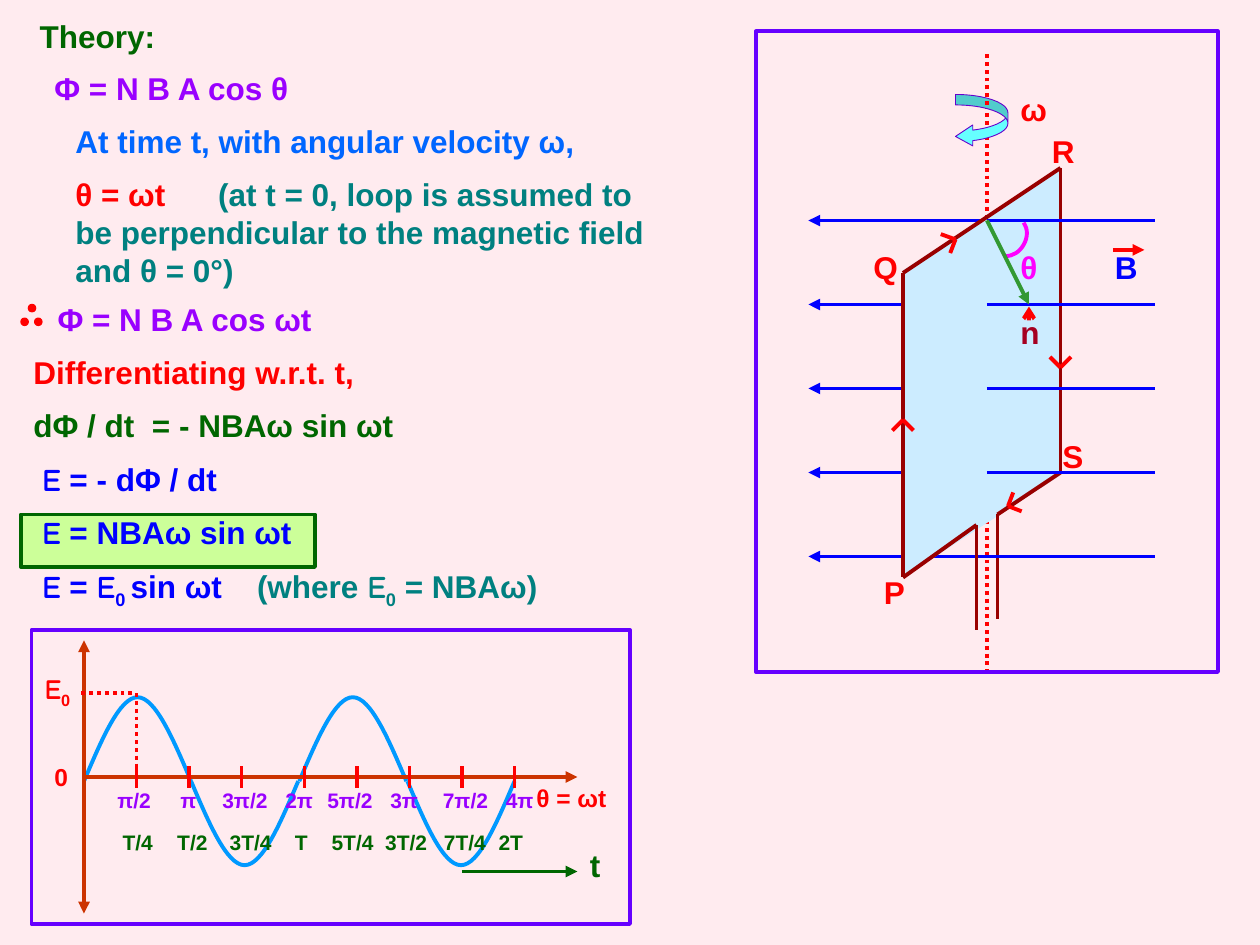
from dataclasses import dataclass

from lxml.etree import SubElement
from pptx import Presentation
from pptx.dml.color import RGBColor
from pptx.enum.dml import MSO_LINE_DASH_STYLE as DASH
from pptx.enum.shapes import MSO_CONNECTOR, MSO_SHAPE as SHAPE
from pptx.enum.text import MSO_AUTO_SIZE
from pptx.oxml.ns import qn
from pptx.util import Pt

PX = 7620
C = {
    "bg": "FFEBEF", "red": "FF0000", "blue": "0000FF", "green": "006600",
    "violet": "9900FF", "sky": "0066FF", "teal": "008080", "maroon": "990000",
    "frame": "6600FF", "loop": "CCECFF", "pink": "FF00FF", "normal": "339933",
    "nhat": "A50021", "cyan": "66FFFF", "purple": "6600CC", "lime": "CCFF99",
    "wave": "0099FF", "axis": "CC3300",
}


@dataclass
class Run:
    text: str
    color: str
    size: int = 18
    font: str = "Arial"
    base: int = 0


@dataclass
class Para:
    runs: list[Run]
    tabs: tuple[int, ...] = ()


@dataclass
class Line:
    x1: int
    y1: int
    x2: int
    y2: int
    color: str
    tail: str = ""
    head: str = ""
    dotted: bool = False


prs = Presentation()
prs.slide_width, prs.slide_height = 1200 * PX, 900 * PX
s = prs.slides.add_slide(prs.slide_layouts[6])
s.background.fill.solid()
s.background.fill.fore_color.rgb = RGBColor.from_string(C["bg"])


def paint(sp, fill: str = "", line: str = "", width: float = 2.25) -> None:
    sp.shadow.inherit = False
    for part, color in ((sp.fill, fill), (sp.line.fill, line)):
        if color:
            part.solid()
            part.fore_color.rgb = RGBColor.from_string(C[color])
        else:
            part.background()
    if line:
        sp.line.width = Pt(width)


def shape(kind, x: int, y: int, w: int, h: int, fill="", line="", width=2.25):
    sp = s.shapes.add_shape(kind, x * PX, y * PX, w * PX, h * PX)
    paint(sp, fill, line, width)
    return sp


def curve(points: list[tuple[int, int]], color: str) -> None:
    builder = s.shapes.build_freeform(*points[0], scale=PX)
    builder.add_line_segments(points[1:], close=False)
    sp = builder.convert_to_shape()
    outline = sp._element.find(".//" + qn("a:path"))
    segments = outline.findall(qn("a:lnTo"))
    for i in range(0, len(segments), 3):
        bezier = SubElement(outline, qn("a:cubicBezTo"))
        for segment in segments[i:i + 3]:
            bezier.append(segment[0])
            outline.remove(segment)
    paint(sp, line=color)


def draw(ln: Line) -> None:
    cx = s.shapes.add_connector(MSO_CONNECTOR.STRAIGHT, ln.x1 * PX, ln.y1 * PX,
                                ln.x2 * PX, ln.y2 * PX)
    cx.line.color.rgb = RGBColor.from_string(C[ln.color])
    cx.line.width = Pt(2.25)
    if ln.dotted:
        cx.line.dash_style = DASH.ROUND_DOT
    props = cx.line.fill._xPr
    for tag, kind in (("a:headEnd", ln.head), ("a:tailEnd", ln.tail)):
        if kind:
            SubElement(props, qn(tag), type=kind)
    SubElement(cx._element.spPr, qn("a:effectLst"))


def text(x: int, y: int, w: int, h: int, paras: list[Para], wrap: bool = True) -> None:
    tf = s.shapes.add_textbox(x * PX, y * PX, w * PX, h * PX).text_frame
    tf.word_wrap = wrap
    tf.auto_size = MSO_AUTO_SIZE.SHAPE_TO_FIT_TEXT
    for i, para in enumerate(paras):
        p = tf.add_paragraph() if i else tf.paragraphs[0]
        if i:
            p.space_before = Pt(9)
        if para.tabs:
            stops = SubElement(p._p.get_or_add_pPr(), qn("a:tabLst"))
            for pos in para.tabs:
                SubElement(stops, qn("a:tab"), pos=str(pos * PX), algn="l")
        for run in para.runs:
            r = p.add_run()
            r.text = run.text
            r.font.size, r.font.name, r.font.bold = Pt(run.size), run.font, True
            r.font.color.rgb = RGBColor.from_string(C[run.color])
            if run.base:
                r.font._element.set("baseline", str(run.base * 1000))


def label(x: int, y: int, w: int, words: str, color: str, size: int = 18,
          wrap: bool = True) -> None:
    text(x, y, w, {18: 48, 14: 40, 12: 36}[size], [Para([Run(words, color, size)])], wrap)


def emf(color: str = "blue", size: int = 18) -> Run:
    return Run("E", color, size, "Comic Neue")


def sub(words: str, color: str = "blue", size: int = 18) -> Run:
    return Run(words, color, size, base=-25)


FIELD_Y = range(210, 531, 80)

draw(Line(940, 100, 940, 640, "red", dotted=True))
for y in FIELD_Y:
    draw(Line(940, y, 770, y, "blue", "triangle"))
for x, y, name in ((830, 540, "P"), (820, 230, "Q"), (990, 120, "R"), (1000, 410, "S")):
    label(x, y, 50, name, "red")
loop = shape(SHAPE.PARALLELOGRAM, 740, 280, 390, 150, "loop")
loop.adjustments[0] = 0.65
loop.rotation = 90
loop._element.spPr.xfrm.set("flipH", "1")
for ends in ((930, 500, 930, 600), (950, 490, 950, 590), (860, 260, 860, 550),
             (1010, 160, 1010, 450), (860, 260, 1010, 160), (860, 550, 930, 500),
             (950, 490, 1010, 450)):
    draw(Line(*ends, "maroon"))
label(1050, 230, 60, "B", "blue")
draw(Line(1060, 238, 1090, 238, "red", "triangle"))
for y in FIELD_Y:
    draw(Line(940, y, 1100, y, "blue"))
curve([(975, 212), (979, 218), (979, 226), (975, 233), (971, 240), (965, 244),
       (957, 244)], "pink")
label(960, 230, 41, "θ", "pink", wrap=False)
turn = shape(SHAPE.CURVED_LEFT_ARROW, 910, 90, 50, 50, "cyan", "purple", 0.5)
for i, value in enumerate((0.2, 0.4, 0.33)):
    turn.adjustments[i] = value
draw(Line(940, 100, 940, 50, "red", dotted=True))
shape(SHAPE.RECTANGLE, 720, 30, 440, 610, line="frame")
label(960, 80, 60, "ω", "red")
draw(Line(940, 210, 980, 290, "normal", "triangle"))
draw(Line(980, 302, 980, 292, "red", "arrow"))
label(960, 292, 40, "n", "nhat")

label(26, 10, 134, "Theory:", "green", wrap=False)
label(40, 60, 250, "Φ = N B A cos θ", "violet", wrap=False)
text(60, 110, 570, 174, [
    Para([Run("At time t, with angular velocity ω,", "sky")]),
    Para([Run("θ = ωt\t", "red"),
          Run("(at t = 0, loop is assumed to be perpendicular to the magnetic field "
              "and θ = 0°)", "teal")], tabs=(136,)),
])
for x, y in ((20, 303), (33, 303), (27, 290)):
    shape(SHAPE.OVAL, x, y, 7, 7, "red", "red", 0.75)
label(43, 280, 277, "Φ = N B A cos ωt", "violet", wrap=False)
shape(SHAPE.RECTANGLE, 20, 490, 280, 50, "lime", "green")
space = Run(" ", "blue")
text(20, 330, 600, 265, [
    Para([Run("Differentiating w.r.t. t,", "red")]),
    Para([Run("dΦ / dt\t= - NBAω sin ωt", "green")], tabs=(113,)),
    Para([space, emf(), Run(" = - dΦ / dt", "blue")]),
    Para([space, emf(), Run(" = NBAω sin ωt", "blue")]),
    Para([space, emf(), Run(" = ", "blue"), emf(), sub("0 "), Run("sin ωt\t", "blue"),
          Run("(where ", "teal"), emf("teal"), sub("0", "teal"),
          Run(" = NBAω)", "teal")], tabs=(213,)),
])

for start, peak in ((80, 664), (182, 824), (285, 664), (388, 824)):
    xs = [start + 17 * k for k in range(7)]
    mid = (744 + peak) // 2
    curve(list(zip(xs, (744, mid, peak, peak, peak, mid, 744))), "wave")
draw(Line(80, 610, 80, 870, "axis", "triangle", "triangle"))
label(40, 720, 40, "0", "red", 14)
for x, w, angle in ((160, 40, "π"), (260, 70, "2π"), (360, 70, "3π"), (470, 70, "4π"),
                    (100, 60, "π/2"), (200, 70, "3π/2"), (300, 70, "5π/2"),
                    (410, 70, "7π/2")):
    label(x, 744, w, angle, "violet", 12)
text(105, 784, 430, 36, [
    Para([Run("T/4\tT/2\t3T/4\tT\t5T/4\t3T/2\t7T/4\t2T", "green", 12)],
         tabs=(52, 102, 164, 199, 250, 306, 358))])
draw(Line(440, 830, 550, 830, "green", "triangle"))
label(550, 800, 40, "t", "green")
label(499, 740, 91, "θ = ωt", "red", 14, wrap=False)
draw(Line(80, 740, 550, 740, "axis", "triangle"))
for x in (130, 180, 230, 290, 340, 390, 440, 490):
    draw(Line(x, 730, x, 750, "red"))
text(20, 630, 62, 48, [Para([Run(" ", "red", 18, "Comic Neue"), emf("red", 16),
                             sub("0", "red", 16)])], wrap=False)
draw(Line(126, 660, 76, 660, "red", dotted=True))
draw(Line(130, 660, 130, 730, "red", dotted=True))
shape(SHAPE.RECTANGLE, 30, 600, 570, 280, line="frame")
for tip, wings in (((910, 228), ((896, 223), (905, 241))),
                   ((960, 482), ((973, 487), (965, 469))),
                   ((860, 400), ((850, 410), (870, 410))),
                   ((1010, 350), ((1000, 340), (1020, 340)))):
    for wing in wings:
        draw(Line(*wing, *tip, "red"))

prs.save("out.pptx")
